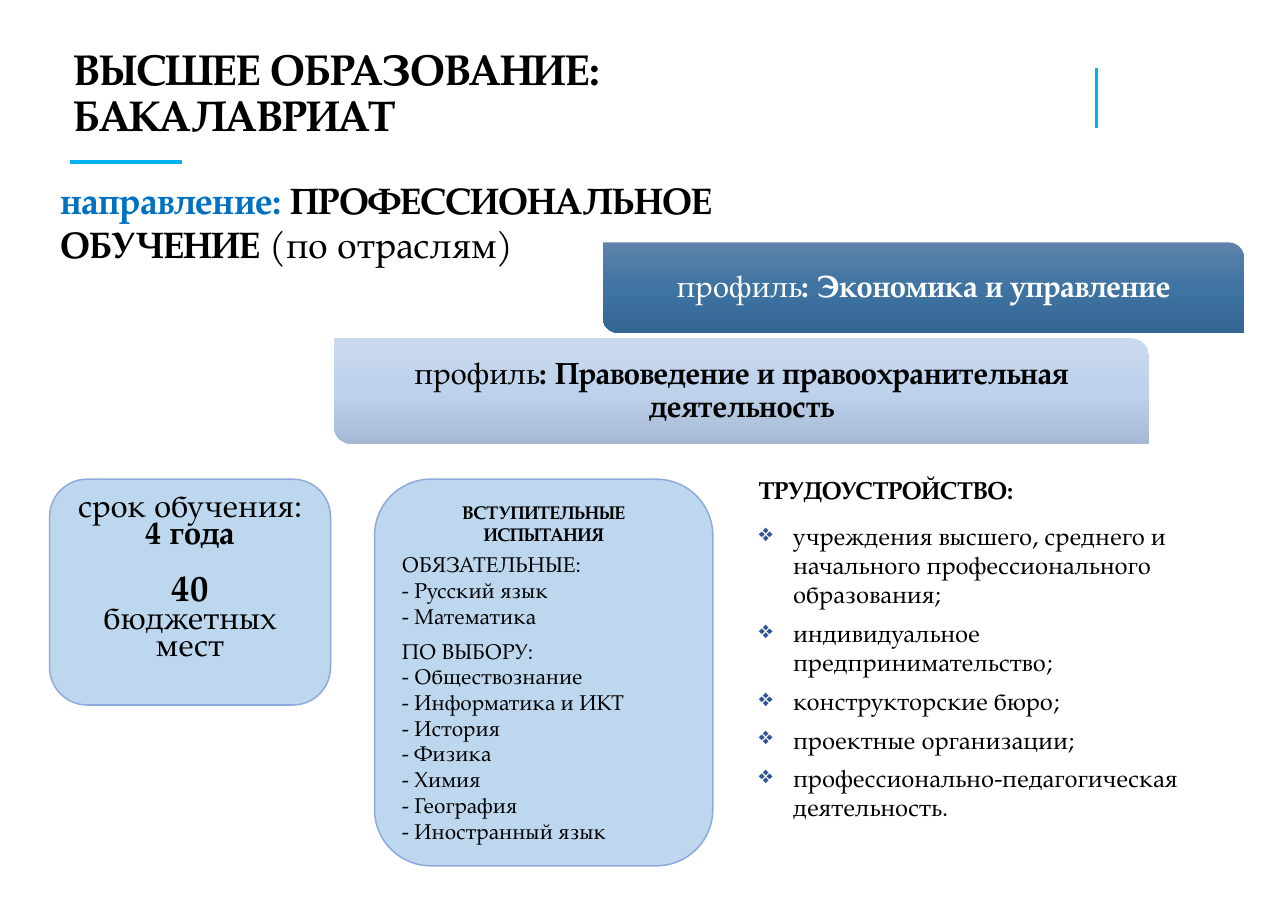
from copy import deepcopy

from lxml.etree import SubElement
from pptx import Presentation
from pptx.dml.color import RGBColor
from pptx.enum.shapes import MSO_CONNECTOR, MSO_SHAPE
from pptx.enum.text import MSO_ANCHOR, PP_ALIGN
from pptx.oxml.ns import qn
from pptx.util import Inches, Pt


def rgb(value):
    return RGBColor.from_string(value)


def add_run(p, text, size=16, bold=False, color="000000", font="TeX Gyre Pagella"):
    r = p.add_run()
    r.text = text
    r.font.name = font
    r.font.size = Pt(size)
    r.font.bold = bold
    r.font.color.rgb = rgb(color)


class Page:
    """Draws styled elements on one slide."""

    accent = "00B0F0"
    card_fill, card_line = "BDD7EE", "8FAADC"
    bullet_color = "2F5597"

    def __init__(self, prs):
        self.slide = prs.slides.add_slide(prs.slide_layouts[6])
        self.shapes = self.slide.shapes

    def rule(self, x1, y1, x2, y2, width):
        line = self.shapes.add_connector(
            MSO_CONNECTOR.STRAIGHT, Inches(x1), Inches(y1), Inches(x2), Inches(y2))
        line.line.color.rgb = rgb(self.accent)
        line.line.width = Pt(width)
        SubElement(line._element.spPr, qn("a:effectLst"))

    def frame(self, sp, anchor):
        tf = sp.text_frame
        tf.word_wrap = True
        tf.vertical_anchor = anchor
        return tf

    def box(self, x, y, w, h, anchor=MSO_ANCHOR.TOP):
        sp = self.shapes.add_textbox(Inches(x), Inches(y), Inches(w), Inches(h))
        return self.frame(sp, anchor)

    def shape(self, kind, x, y, w, h):
        sp = self.shapes.add_shape(kind, Inches(x), Inches(y), Inches(w), Inches(h))
        sp.shadow.inherit = False
        return sp

    def card(self, x, y, w, h):
        sp = self.shape(MSO_SHAPE.ROUNDED_RECTANGLE, x, y, w, h)
        sp.fill.solid()
        sp.fill.fore_color.rgb = rgb(self.card_fill)
        sp.line.color.rgb = rgb(self.card_line)
        sp.line.width = Pt(1)
        return self.frame(sp, MSO_ANCHOR.TOP)

    def banner(self, x, y, w, h, colors, profile, text_color):
        sp = self.shape(MSO_SHAPE.ROUND_2_DIAG_RECTANGLE, x, y, w, h)
        sp.adjustments[0], sp.adjustments[1] = 0, 0.17
        sp.line.fill.background()
        sp.fill.gradient()
        sp.fill.gradient_angle = 270
        stops = sp._element.spPr.find(".//" + qn("a:gsLst"))
        stops.insert(1, deepcopy(stops[0]))
        for i, (stop, color) in enumerate(zip(sp.fill.gradient_stops, colors)):
            stop.position = i / 2
            stop.color.rgb = rgb(color)
        tf = self.frame(sp, MSO_ANCHOR.MIDDLE)
        style = dict(size=20, color=text_color)
        self.para(tf, ("профиль", style), (": " + profile, dict(style, bold=True)),
                  align=PP_ALIGN.CENTER, spacing=0.9)

    def para(self, tf, *runs, align=PP_ALIGN.LEFT, spacing=1.0, before=0, after=0,
             bullet=None):
        p = tf.paragraphs[0]
        if p.runs:
            p = tf.add_paragraph()
        p.alignment = align
        p.line_spacing = spacing
        p.space_before, p.space_after = Pt(before), Pt(after)
        if bullet:
            pPr = p._p.get_or_add_pPr()
            pPr.set("marL", str(Inches(0.31)))
            pPr.set("indent", str(-Inches(0.31)))
            color = SubElement(pPr, qn("a:buClr"))
            SubElement(color, qn("a:srgbClr"), val=self.bullet_color)
            SubElement(pPr, qn("a:buChar"), char=bullet)
        for text, style in runs:
            add_run(p, text, **style)


def main():
    prs = Presentation()
    prs.slide_width, prs.slide_height = Inches(11.69), Inches(8.27)
    page = Page(prs)
    center = PP_ALIGN.CENTER

    page.rule(0.64, 1.47, 1.65, 1.47, 3)
    page.rule(9.95, 0.62, 9.95, 1.16, 2.25)

    title = page.box(0.57, 0.42, 8.79, 0.88, MSO_ANCHOR.MIDDLE)
    for text in ("ВЫСШЕЕ ОБРАЗОВАНИЕ:", "БАКАЛАВРИАТ"):
        page.para(title, (text, dict(size=28, bold=True)), spacing=0.9)

    direction = page.box(0.45, 1.15, 7.41, 1.72, MSO_ANCHOR.MIDDLE)
    page.para(direction,
              ("направление: ", dict(size=24, bold=True, color="0070C0")),
              ("ПРОФЕССИОНАЛЬНОЕ ОБУЧЕНИЕ ", dict(size=24, bold=True)),
              ("(по отраслям)", dict(size=24)))

    page.banner(5.47, 2.2, 5.82, 0.82, ("5F83AA", "3F73A2", "346694"),
                "Экономика и управление", "FFFFFF")
    page.banner(3.03, 3.07, 7.4, 0.96, ("CAD9EE", "BED2EC", "A6BAD5"),
                "Правоведение и правоохранительная деятельность", "000000")

    term = page.card(0.45, 4.35, 2.55, 2.05)
    for text, size, bold, before in (("срок обучения:", 21, False, 0),
                                     ("4 года", 21, True, 0),
                                     ("40", 24, True, 18),
                                     ("бюджетных мест", 21, False, 0)):
        page.para(term, (text, dict(size=size, bold=bold)),
                  align=center, spacing=0.7, before=before)

    jobs = page.box(6.79, 4.26, 4.49, 3.64)
    page.para(jobs, ("ТРУДОУСТРОЙСТВО:", dict(bold=True)), after=11)
    for job in ("учреждения высшего, среднего и начального профессионального образования;",
                "индивидуальное предпринимательство;",
                "конструкторские бюро;",
                "проектные организации;",
                "профессионально-педагогическая деятельность."):
        page.para(jobs, (job, {}), after=6, bullet="❖")

    exams = page.card(3.4, 4.35, 3.07, 3.51)
    page.para(exams, ("ВСТУПИТЕЛЬНЫЕ ИСПЫТАНИЯ", dict(size=12, bold=True)), align=center)
    groups = (
        ("ОБЯЗАТЕЛЬНЫЕ:", 4, ("Русский язык", "Математика")),
        ("ПО ВЫБОРУ:", 6, ("Обществознание", "Информатика и ИКТ", "История", "Физика",
                           "Химия", "География", "Иностранный язык")),
    )
    for heading, gap, subjects in groups:
        page.para(exams, (heading, dict(size=14)), before=gap)
        for subject in subjects:
            page.para(exams, ("- " + subject, dict(size=14)))

    prs.save("out.pptx")


if __name__ == "__main__":
    main()
